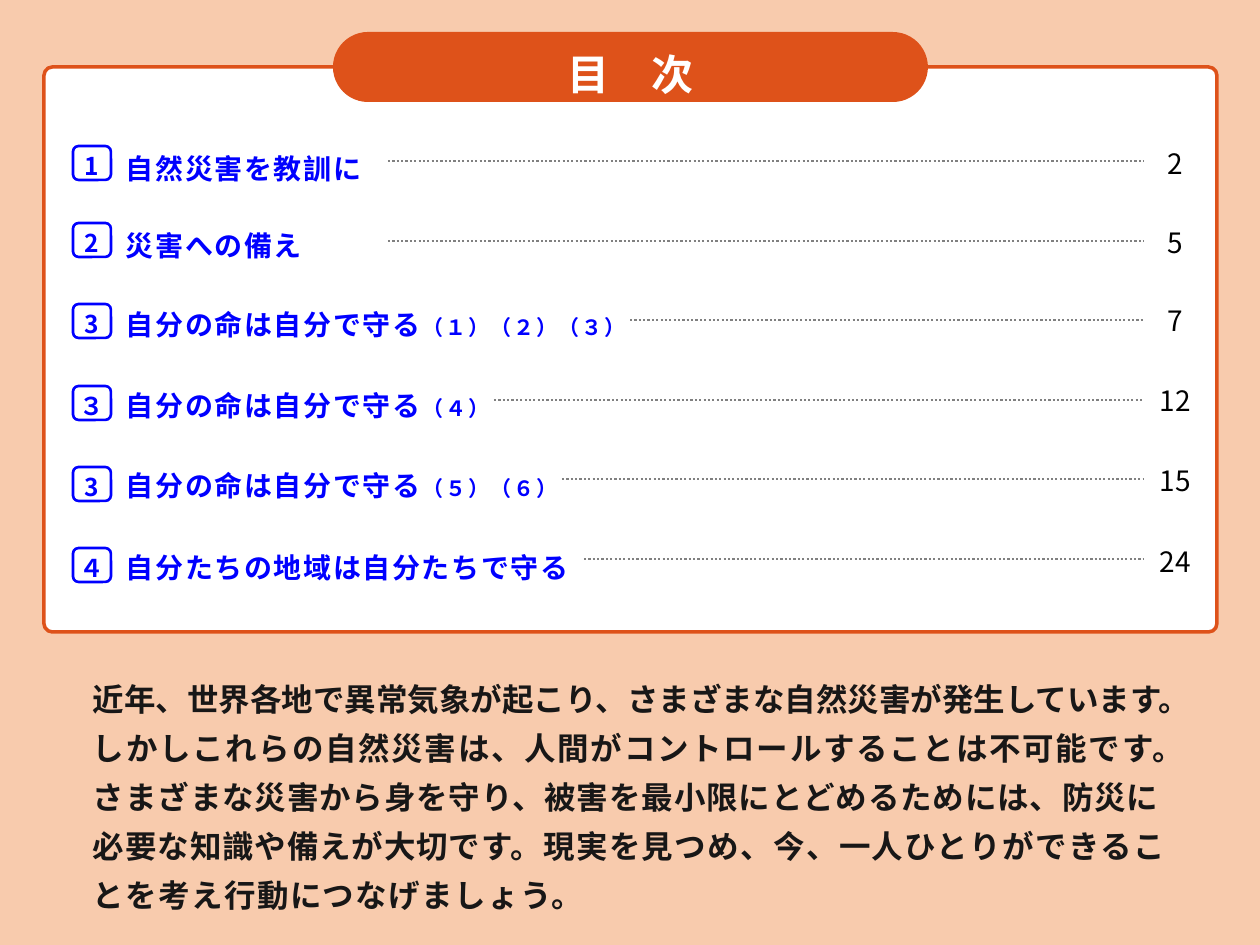
"""Build the contents slide of a disaster preparedness booklet."""
from lxml.etree import SubElement
from pptx import Presentation
from pptx.dml.color import RGBColor
from pptx.enum.dml import MSO_LINE
from pptx.enum.shapes import MSO_CONNECTOR, MSO_SHAPE
from pptx.enum.text import MSO_ANCHOR, MSO_AUTO_SIZE, PP_ALIGN
from pptx.oxml.ns import qn
from pptx.util import Pt

PX = 914400 / 126
FONT = "Noto Sans CJK JP"
PEACH = RGBColor(0xF8, 0xCB, 0xAD)
ORANGE = RGBColor(0xDE, 0x52, 0x1A)
WHITE = RGBColor(0xFF, 0xFF, 0xFF)
BLACK = RGBColor(0x00, 0x00, 0x00)
INK = RGBColor(0x18, 0x17, 0x17)
BLUE = RGBColor(0x00, 0x00, 0xFF)
GRAY = RGBColor(0x80, 0x80, 0x80)


def px(*lengths):
    return [round(length * PX) for length in lengths]


def write(shape, paragraphs, color, bold=True, align=PP_ALIGN.LEFT, leading=None, **frame_format):
    frame = shape.text_frame
    defaults = {"word_wrap": True, "auto_size": MSO_AUTO_SIZE.SHAPE_TO_FIT_TEXT}
    for name, value in (defaults | frame_format).items():
        setattr(frame, name, value)
    for index, runs in enumerate(paragraphs):
        paragraph = frame.add_paragraph() if index else frame.paragraphs[0]
        paragraph.alignment = align
        paragraph.line_spacing = leading
        for text, size, spacing in runs:
            run = paragraph.add_run()
            run.text = text
            for name, value in {"size": Pt(size), "bold": bold, "name": FONT}.items():
                setattr(run.font, name, value)
            run.font.color.rgb = color
            properties = run.font._element
            SubElement(properties, qn("a:ea")).set("typeface", FONT)
            if spacing:
                properties.set("spc", str(round(spacing * 100)))


deck = Presentation()
deck.slide_width, deck.slide_height = px(1260, 945)
slide = deck.slides.add_slide(deck.slide_layouts[6])
slide.background.fill.solid()
slide.background.fill.fore_color.rgb = PEACH
shapes = slide.shapes

message = shapes.add_textbox(*px(44, 644, 1173, 295))
side, edge = px(49, 25)
write(message, [
    [("近年、世界各地で異常気象が起こり、さまざまな自然災害が発生しています。", 18, 0),
     ("しかしこれらの自然災害は、人間がコントロールすることは不可能です。", 18, 1)],
    [("さまざまな災害から身を守り、被害を最小限にとどめるためには、防災に必要な知識や備えが大切です。", 18, 0.5),
     ("現実を見つめ、今、一人ひとりができることを考え行動につなげましょう。", 18, 0.8)],
], INK, leading=Pt(28), margin_left=side, margin_right=side, margin_top=edge, margin_bottom=edge)

panels = [
    ((44, 67, 1173, 565), 0.015, WHITE, Pt(2)),
    ((333, 32, 595, 70), 0.5, ORANGE, None),
]
for box, rounding, fill, outline in panels:
    panel = shapes.add_shape(MSO_SHAPE.ROUNDED_RECTANGLE, *px(*box))
    panel.adjustments[0] = rounding
    panel.shadow.inherit = False
    panel.fill.solid()
    panel.fill.fore_color.rgb = fill
    if outline:
        panel.line.color.rgb = ORANGE
        panel.line.width = outline
    else:
        panel.line.fill.background()

heading = shapes.add_textbox(*px(333, 42, 595, 63))
write(heading, [[("目　次", 24, 0)]], WHITE, align=PP_ALIGN.CENTER)

chapters = [
    ("1", "自然災害を教訓に", "", "2", 357, 388, 146, 145, 140, 161),
    ("2", "災害への備え", "", "5", 357, 388, 223, 222, 219, 241),
    ("3", "自分の命は自分で守る", "（１）（２）（３）", "7", 733, 630, 304, 301, 297, 320),
    ("３", "自分の命は自分で守る", "（４）", "12", 733, 494, 386, 382, 377, 400),
    ("3", "自分の命は自分で守る", "（５）（６）", "15", 760, 562, 467, 462, 457, 479),
    ("４", "自分たちの地域は自分たちで守る", "", "24", 760, 584, 548, 544, 538, 559),
]
for number, title, parts, page, width, leader_left, badge_top, title_top, page_top, leader_y in chapters:
    entry = shapes.add_textbox(*px(84, title_top, width, 47))
    runs = [("　" + title, 16, 1)]
    if parts:
        runs.append((parts, 12, 1))
    write(entry, [runs], BLUE)

    page_number = shapes.add_textbox(*px(1144, page_top, 63, 47))
    write(page_number, [[(page, 16, 0)]], BLACK, bold=False, align=PP_ALIGN.CENTER)

    leader = shapes.add_connector(MSO_CONNECTOR.STRAIGHT, *px(leader_left, leader_y, 1144, leader_y))
    leader.line.color.rgb = GRAY
    leader.line.width = Pt(1.25)
    leader.line.dash_style = MSO_LINE.ROUND_DOT
    SubElement(leader._element.spPr, qn("a:effectLst"))

    badge = shapes.add_shape(MSO_SHAPE.ROUNDED_RECTANGLE, *px(73, badge_top, 38, 34))
    badge.shadow.inherit = False
    badge.fill.solid()
    badge.fill.fore_color.rgb = WHITE
    badge.line.color.rgb = BLUE
    badge.line.width = Pt(1.5)
    write(badge, [[(number, 14, 0)]], BLUE, align=PP_ALIGN.CENTER, leading=Pt(14),
          auto_size=MSO_AUTO_SIZE.NONE, vertical_anchor=MSO_ANCHOR.MIDDLE,
          margin_left=0, margin_right=0, margin_top=px(10)[0], margin_bottom=0)

deck.save("out.pptx")
